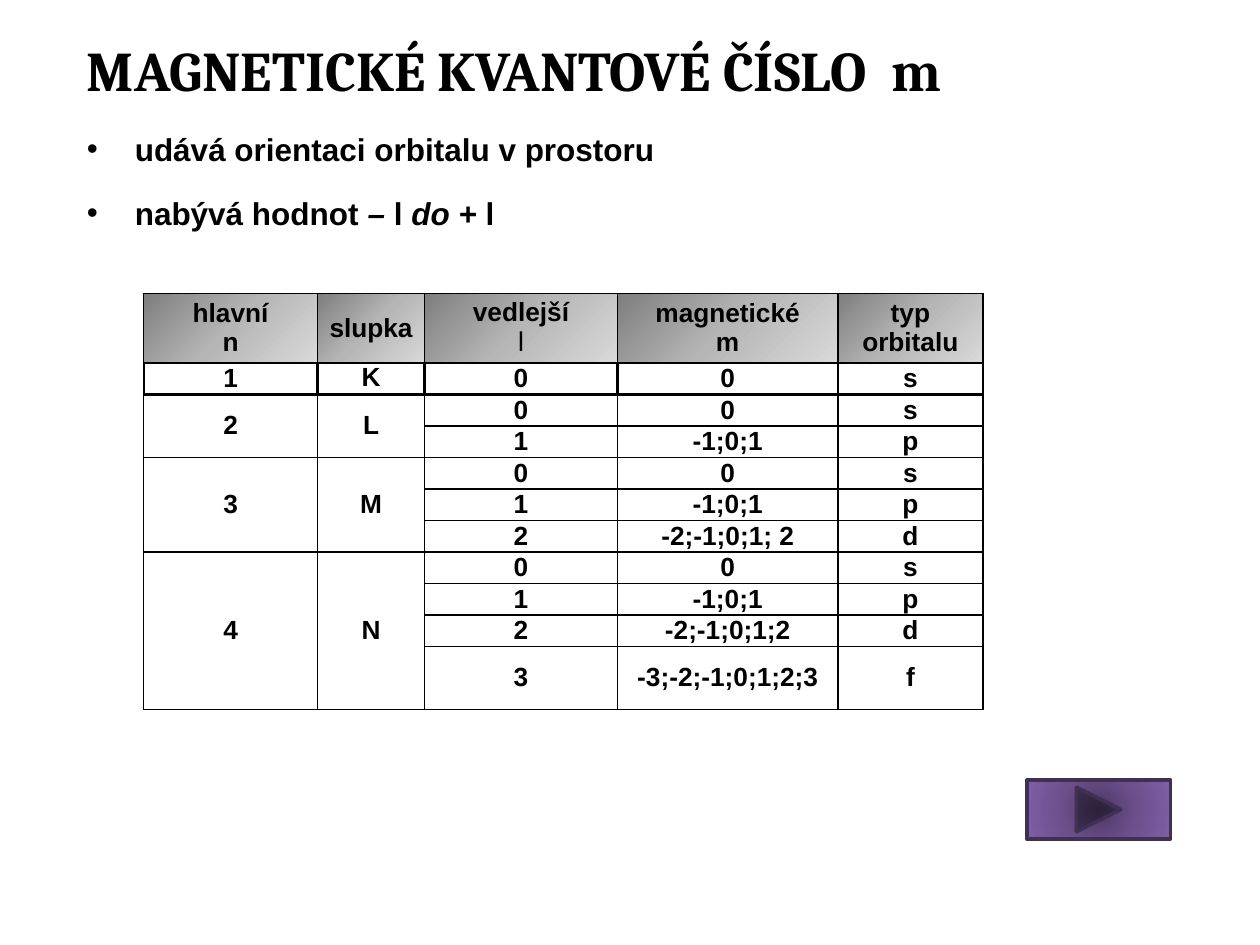
import pptx
import pptx.dml.color
import pptx.enum.shapes
import pptx.enum.text
import pptx.oxml
import pptx.oxml.ns
import pptx.util
from lxml import etree

# Content
HEADING = "MAGNETICKÉ KVANTOVÉ ČÍSLO  m"
PROPERTIES = [  # each run: text, italic
    [("udává orientaci orbitalu v\u00a0prostoru", False)],
    [("nabývá hodnot ", False), ("– ", True), ("l", False),
     (" do + ", True), ("l", False)],
]
COLUMN_HEADS = [  # each line: text, font, bold
    [("hlavní", "Arial", True), ("n", "Arial", True)],
    [("slupka", "Arial", True)],
    [("vedlejší", "Arial", True), ("l", "Roboto", False)],
    [("magnetické", "Arial", True), ("m", "Arial", True)],
    [("typ orbitalu", "Arial", True)],
]
SHELLS = [  # n, shell, then l, m and orbital of each subshell
    ("1", "K", [("0", "0", "s")]),
    ("2", "L", [("0", "0", "s"), ("1", "-1;0;1", "p")]),
    ("3", "M", [("0", "0", "s"), ("1", "-1;0;1", "p"),
                ("2", "-2;-1;0;1; 2", "d")]),
    ("4", "N", [("0", "0", "s"), ("1", "-1;0;1", "p"),
                ("2", "-2;-1;0;1;2", "d"), ("3", "-3;-2;-1;0;1;2;3", "f")]),
]

# Layout and colours
LEFT, TEXT_WIDTH = 0.59, 7.88
COLUMN_WIDTHS = [1.38, 0.85, 1.53, 1.75, 1.15]
HEAD_HEIGHT, ROW_HEIGHT = 0.55, 0.25
BLACK = "000000"
HEAD_STOPS = [(0, "7E7E7E"), (50, "B6B6B6"), (100, "D9D9D9")]
BUTTON_STOPS = [(0, "4C3863"), (50, "6C508C"), (100, "805FA7")]
DIAGONAL = '<a:lin ang="2700000" scaled="0"/>'
RADIAL = ('<a:path path="circle">'
          '<a:fillToRect l="50000" t="50000" r="50000" b="50000"/></a:path>')

inches, points = pptx.util.Inches, pptx.util.Pt
qn = pptx.oxml.ns.qn
CENTER = pptx.enum.text.PP_ALIGN.CENTER
MIDDLE = pptx.enum.text.MSO_ANCHOR.MIDDLE


def color(value):
    return pptx.dml.color.RGBColor.from_string(value)


def add_run(paragraph, text, size, font="Arial", bold=True, italic=False):
    run = paragraph.add_run()
    run.text = text
    run.font.size, run.font.name = points(size), font
    run.font.bold, run.font.italic = bold, italic
    run.font.color.rgb = color(BLACK)


def element(xml):
    return pptx.oxml.parse_xml(
        xml.replace(" ", f' {pptx.oxml.ns.nsdecls("a")} ', 1))


def fill_gradient(fill, properties, stops, direction):
    fill.gradient()
    gradient = properties.find(qn("a:gradFill"))
    marks = "".join(f'<a:gs pos="{share * 1000}"><a:srgbClr val="{shade}"/></a:gs>'
                    for share, shade in stops)
    new = element(f'<a:gradFill rotWithShape="1"><a:gsLst>{marks}</a:gsLst>'
                  f'{direction}</a:gradFill>')
    properties.replace(gradient, new)


def set_borders(properties, widths):
    for index, (side, width) in enumerate(zip("LRTB", widths)):
        properties.insert(index, element(
            f'<a:ln{side} w="{points(width)}"><a:solidFill>'
            f'<a:srgbClr val="{BLACK}"/></a:solidFill></a:ln{side}>'))


def write_cell(cell, lines):
    cell.vertical_anchor = MIDDLE
    cell.margin_left = cell.margin_right = inches(0.07)
    cell.margin_top = cell.margin_bottom = 0
    for index, (text, font, bold) in enumerate(lines):
        frame = cell.text_frame
        paragraph = frame.add_paragraph() if index else frame.paragraphs[0]
        paragraph.alignment = CENTER
        add_run(paragraph, text, 15, font, bold)


def place(shape, left, top, width, height):
    shape.left, shape.top = inches(left), inches(top)
    shape.width, shape.height = inches(width), inches(height)
    shape.text_frame.auto_size = pptx.enum.text.MSO_AUTO_SIZE.NONE


deck = pptx.Presentation()
deck.slide_width, deck.slide_height = inches(10), inches(7.5)
slide = deck.slides.add_slide(deck.slide_layouts[1])

# Title
title = slide.shapes.title
place(title, LEFT, 0.19, TEXT_WIDTH, 0.72)
title.text_frame.vertical_anchor = MIDDLE
title.text_frame.paragraphs[0].alignment = pptx.enum.text.PP_ALIGN.LEFT
add_run(title.text_frame.paragraphs[0], HEADING, 32, "Cambria")

# Bulleted properties
properties_list = slide.placeholders[1]
place(properties_list, LEFT, 0.98, TEXT_WIDTH, 0.9)
for index, runs in enumerate(PROPERTIES):
    frame = properties_list.text_frame
    paragraph = frame.add_paragraph() if index else frame.paragraphs[0]
    paragraph.space_before = points(15 if index else 0)
    indent = inches(0.38)
    paragraph_format = paragraph._p.get_or_add_pPr()
    paragraph_format.set("marL", str(indent))
    paragraph_format.set("indent", str(-indent))
    for text, italic in runs:
        add_run(paragraph, text, 18, italic=italic)

# Table of quantum numbers; the last row is twice as high
subshell_count = sum(len(subshells) for _, _, subshells in SHELLS)
row_heights = ([HEAD_HEIGHT] + [ROW_HEIGHT] * (subshell_count - 1)
               + [2 * ROW_HEIGHT])
numbers = slide.shapes.add_table(
    len(row_heights), len(COLUMN_WIDTHS), inches(1.14), inches(2.33),
    inches(sum(COLUMN_WIDTHS)), inches(sum(row_heights))).table
numbers.first_row = numbers.horz_banding = False
for column, width in zip(numbers.columns, COLUMN_WIDTHS):
    column.width = inches(width)
for row, height in zip(numbers.rows, row_heights):
    row.height = inches(height)

for column, lines in enumerate(COLUMN_HEADS):
    write_cell(numbers.cell(0, column), lines)

first = 1
for n, shell, subshells in SHELLS:
    last = first + len(subshells) - 1
    for column, text in enumerate((n, shell)):
        cell = numbers.cell(first, column)
        if last > first:
            cell.merge(numbers.cell(last, column))
        write_cell(cell, [(text, "Arial", True)])
    for row, subshell in enumerate(subshells, first):
        for column, text in enumerate(subshell, 2):
            write_cell(numbers.cell(row, column), [(text, "Arial", True)])
    first = last + 1
numbers.cell(1, 1).vertical_anchor = pptx.enum.text.MSO_ANCHOR.TOP

# Fills and borders; the K row has a heavier frame
for row in range(len(row_heights)):
    side = 1.5 if row == 1 else 1
    top = 1.5 if row in (1, 2) else 1
    bottom = 1.5 if row in (0, 1) else 1
    for column in range(len(COLUMN_WIDTHS)):
        cell = numbers.cell(row, column)
        cell_format = cell._tc.get_or_add_tcPr()
        if row == 0:
            fill_gradient(cell.fill, cell_format, HEAD_STOPS, DIAGONAL)
        else:
            cell.fill.background()
        set_borders(cell_format, (side, side, top, bottom))

# Forward button
forward = slide.shapes.add_shape(
    pptx.enum.shapes.MSO_SHAPE.ACTION_BUTTON_FORWARD_OR_NEXT,
    inches(8.15), inches(6.19), inches(1.14), inches(0.47))
forward.shadow.inherit = False
fill_gradient(forward.fill, forward._element.spPr, BUTTON_STOPS, RADIAL)
forward.line.color.rgb = color("403152")
forward.line.width = points(2)

deck.save("out.pptx")
